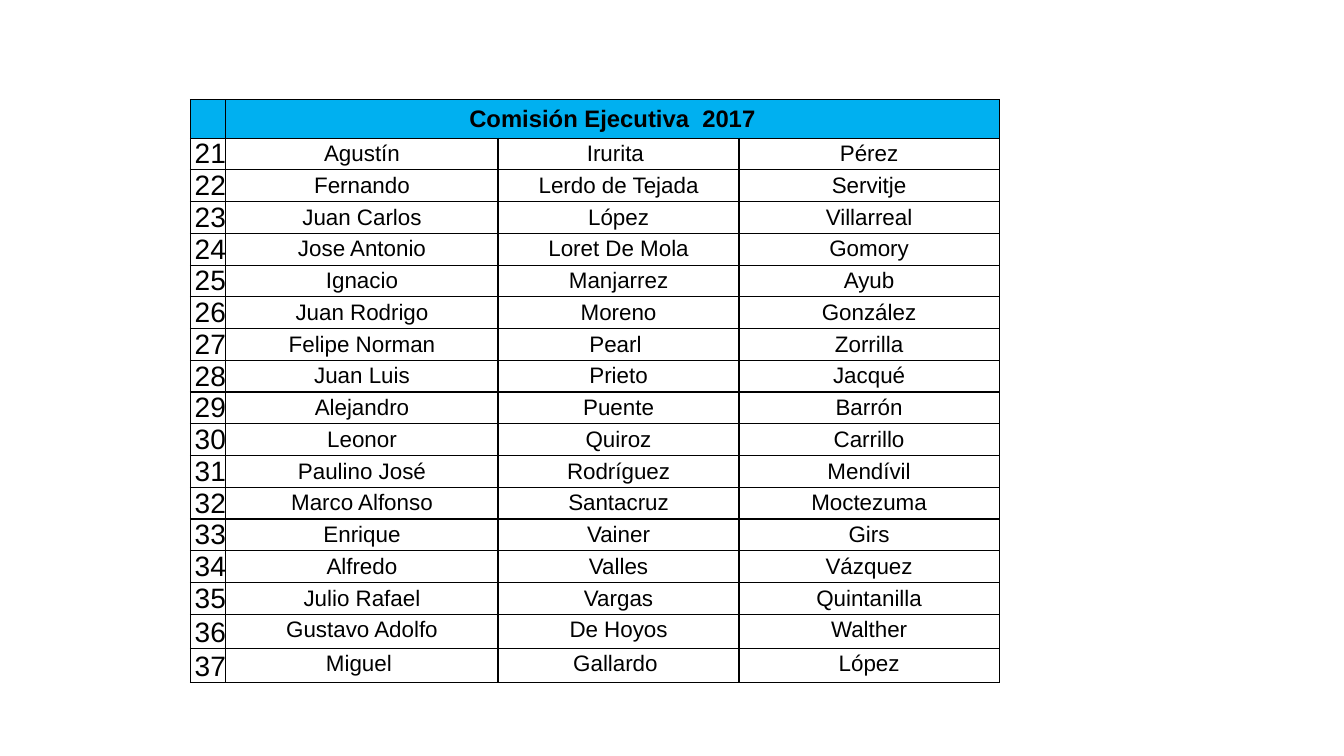
from dataclasses import dataclass

from lxml import etree
from pptx import Presentation, util as u
from pptx.dml.color import RGBColor
from pptx.enum import text
from pptx.oxml.ns import qn

BLACK = RGBColor(0x00, 0x00, 0x00)
WHITE = RGBColor(0xFF, 0xFF, 0xFF)
SKY_BLUE = RGBColor(0x00, 0xB0, 0xF0)

SLIDE_WIDTH, SLIDE_HEIGHT = u.Inches(13.33), u.Inches(7.5)
TABLE_LEFT, TABLE_TOP = u.Inches(1.89), u.Inches(0.99)
COLUMN_WIDTHS = [u.Inches(width) for width in (0.35, 2.7, 2.39, 2.58)]
HEADER_HEIGHT, ROW_HEIGHT, TALL_ROW_HEIGHT = u.Inches(0.38), u.Pt(22.7), u.Inches(0.34)
TALL_ROW_INSET = u.Inches(0.03)
FIRST_NUMBER = 21


@dataclass
class Member:
    given_name: str
    first_surname: str
    second_surname: str
    tall: bool = False


MEMBERS = [
    Member("Agustín", "Irurita ", "Pérez"),
    Member("Fernando", "Lerdo de Tejada", "Servitje"),
    Member("Juan Carlos", "López", "Villarreal"),
    Member("Jose Antonio", "Loret De Mola", "Gomory"),
    Member("Ignacio", "Manjarrez", "Ayub"),
    Member("Juan Rodrigo", "Moreno", "González"),
    Member("Felipe Norman", "Pearl ", "Zorrilla"),
    Member("Juan Luis", "Prieto", "Jacqué"),
    Member("Alejandro", "Puente", "Barrón"),
    Member("Leonor", "Quiroz", "Carrillo"),
    Member("Paulino José", "Rodríguez", "Mendívil"),
    Member("Marco Alfonso", "Santacruz", "Moctezuma"),
    Member("Enrique", "Vainer", "Girs"),
    Member("Alfredo", "Valles", "Vázquez"),
    Member("Julio Rafael", "Vargas", "Quintanilla"),
    Member("Gustavo Adolfo", "De Hoyos", "Walther", tall=True),
    Member("Miguel ", "Gallardo ", "López", tall=True),
]


def add_borders(cell) -> None:
    """Draw a thin black line on each side of a cell."""
    properties = cell._tc.get_or_add_tcPr()
    for position, side in enumerate(("a:lnL", "a:lnR", "a:lnT", "a:lnB")):
        line = etree.Element(qn(side), w=str(u.Pt(1)))
        fill = etree.SubElement(line, qn("a:solidFill"))
        etree.SubElement(fill, qn("a:srgbClr"), val=str(BLACK))
        properties.insert(position, line)


def write_cell(cell, content: str, *, size: float = 16, bold: bool = False,
               fill: RGBColor = WHITE, align=text.PP_ALIGN.CENTER,
               anchor=text.MSO_ANCHOR.MIDDLE, inset: int = 0) -> None:
    """Fill, border and label one table cell."""
    cell.fill.solid()
    cell.fill.fore_color.rgb = fill
    add_borders(cell)
    cell.margin_left = cell.margin_right = cell.margin_bottom = inset
    cell.margin_top = 0
    cell.vertical_anchor = anchor
    paragraph = cell.text_frame.paragraphs[0]
    paragraph.alignment = align
    if content:
        run = paragraph.add_run()
        run.text = content
        run.font.name = "Arial"
        run.font.size = u.Pt(size)
        run.font.bold = bold
        run.font.color.rgb = BLACK


def add_committee_table(slide) -> None:
    heights = [HEADER_HEIGHT] + [
        TALL_ROW_HEIGHT if member.tall else ROW_HEIGHT for member in MEMBERS]
    table = slide.shapes.add_table(
        len(heights), len(COLUMN_WIDTHS), TABLE_LEFT, TABLE_TOP,
        sum(COLUMN_WIDTHS), sum(heights)).table
    table.first_row = table.horz_banding = False
    for column, width in zip(table.columns, COLUMN_WIDTHS):
        column.width = width
    for row, height in zip(table.rows, heights):
        row.height = height

    # Header across the three name columns
    table.cell(0, 1).merge(table.cell(0, 3))
    for column, label in enumerate(("", "Comisión Ejecutiva  2017", "", "")):
        write_cell(table.cell(0, column), label, size=17, bold=True, fill=SKY_BLUE)

    # Numbered members
    for row, member in enumerate(MEMBERS, start=1):
        write_cell(table.cell(row, 0), str(FIRST_NUMBER + row - 1), size=20,
                   align=text.PP_ALIGN.RIGHT, anchor=text.MSO_ANCHOR.BOTTOM)
        names = (member.given_name, member.first_surname, member.second_surname)
        for column, name in enumerate(names, start=1):
            write_cell(table.cell(row, column), name,
                       inset=TALL_ROW_INSET if member.tall else 0)


def main() -> None:
    presentation = Presentation()
    presentation.slide_width, presentation.slide_height = SLIDE_WIDTH, SLIDE_HEIGHT
    blank_layout = presentation.slide_layouts.get_by_name("Blank")
    slide = presentation.slides.add_slide(blank_layout)
    add_committee_table(slide)
    presentation.save("out.pptx")


if __name__ == "__main__":
    main()
